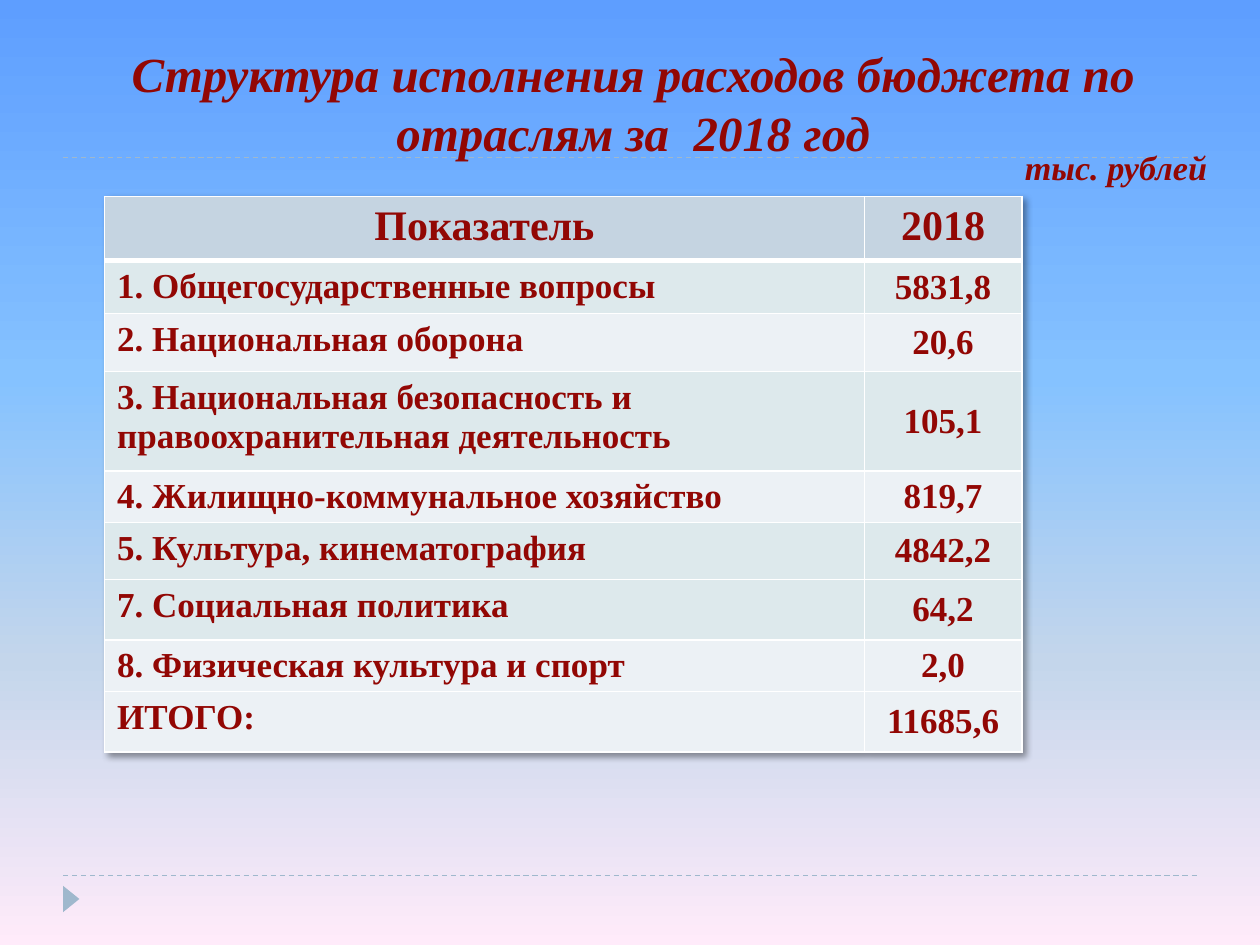
from dataclasses import dataclass
from lxml import etree
from pptx import Presentation
from pptx.dml.color import RGBColor
from pptx.enum.dml import MSO_LINE
from pptx.enum.shapes import MSO_CONNECTOR, MSO_SHAPE
from pptx.enum.text import MSO_ANCHOR, PP_ALIGN
from pptx.oxml.ns import qn
from pptx.util import Inches, Pt

LEFT, MID, RIGHT = PP_ALIGN.LEFT, PP_ALIGN.CENTER, PP_ALIGN.RIGHT
TOP, HALF, BASE = MSO_ANCHOR.TOP, MSO_ANCHOR.MIDDLE, MSO_ANCHOR.BOTTOM
DASH = MSO_LINE.DASH
STRAIGHT = MSO_CONNECTOR.STRAIGHT
WEDGE = MSO_SHAPE.ISOSCELES_TRIANGLE

WIDE, HIGH = Inches(10), Inches(7.5)
COLS, ROWS = 100, 75


@dataclass(frozen=True)
class Theme:
    font: str = "Times New Roman"
    ink: str = "920704"
    rule: str = "9FB8CD"
    edge: str = "FFFFFF"
    head: str = "C5D4E1"
    dark: str = "DDE9EC"
    pale: str = "ECF1F5"
    sky: tuple = ((0, "5E9EFF"), (40, "85C2FF"), (70, "C4D6EB"), (100, "FFEBFA"))
    title: float = 28
    label: float = 24
    body: float = 20
    unit: float = 19.5


@dataclass(frozen=True)
class Box:
    x: float
    y: float
    w: float
    h: float

    def place(self) -> tuple:
        return across(self.x), down(self.y), across(self.w), down(self.h)


@dataclass(frozen=True)
class Note:
    text: str
    box: Box
    size: float
    align: int
    anchor: int


@dataclass(frozen=True)
class Item:
    name: str
    value: str
    tall: float
    fill: str


LOOK = Theme()

NOTES = (
    Note("Структура исполнения расходов бюджета по отраслям за  2018 год",
         Box(5.5, 2.9, 89.5, 10.4), LOOK.title, MID, BASE),
    Note("тыс. рублей", Box(78.9, 10.9, 17.9, 4.7), LOOK.unit, RIGHT, HALF),
)

ITEMS = (
    Item("Показатель", "2018", 5.1, LOOK.head),
    Item("1. Общегосударственные вопросы", "5831,8", 4.2, LOOK.dark),
    Item("2. Национальная оборона", "20,6", 4.6, LOOK.pale),
    Item("3. Национальная безопасность и правоохранительная деятельность",
         "105,1", 7.9, LOOK.dark),
    Item("4. Жилищно-коммунальное хозяйство", "819,7", 4.1, LOOK.pale),
    Item("5. Культура, кинематография", "4842,2", 4.5, LOOK.dark),
    Item("7. Социальная политика", "64,2", 4.8, LOOK.dark),
    Item("8. Физическая культура и спорт", "2,0", 4.1, LOOK.pale),
    Item("ИТОГО:", "11685,6", 4.8, LOOK.pale),
)
SPANS = (60.3, 12.5)


def across(n: float) -> int:
    return round(WIDE * n / COLS)


def down(n: float) -> int:
    return round(HIGH * n / ROWS)


def tint(code: str) -> RGBColor:
    return RGBColor.from_string(code)


def child(node, tag: str, **attrs):
    return etree.SubElement(node, qn(tag), attrs)


def paint_sky(slide) -> None:
    fill = slide.background.fill
    fill.gradient()
    fill.gradient_angle = 270
    stops = slide.element.find(".//" + qn("a:gsLst"))
    for old in list(stops):
        stops.remove(old)
    for pos, code in LOOK.sky:
        stop = child(stops, "a:gs", pos=str(pos * 1000))
        child(stop, "a:srgbClr", val=code)


def draw_rule(slide, y: float) -> None:
    line = slide.shapes.add_connector(
        STRAIGHT, across(5), down(y), across(95), down(y))
    line.line.color.rgb = tint(LOOK.rule)
    line.line.width = Pt(0.75)
    line.line.dash_style = DASH
    child(line.element.spPr, "a:effectLst")


def draw_wedge(slide, box: Box) -> None:
    wedge = slide.shapes.add_shape(WEDGE, *box.place())
    wedge.rotation = 90
    wedge.shadow.inherit = False
    wedge.fill.solid()
    wedge.fill.fore_color.rgb = tint(LOOK.rule)
    wedge.line.fill.background()


def write(frame, text: str, size: float, align: int, slant: bool = False) -> None:
    para = frame.paragraphs[0]
    para.alignment = align
    run = para.add_run()
    run.text = text
    font = run.font
    font.name, font.size = LOOK.font, Pt(size)
    font.bold, font.italic = True, slant
    font.color.rgb = tint(LOOK.ink)


def draw_note(slide, note: Note) -> None:
    frame = slide.shapes.add_textbox(*note.box.place()).text_frame
    frame.word_wrap = True
    frame.vertical_anchor = note.anchor
    write(frame, note.text, note.size, note.align, True)


def edge_cell(cell, base: float) -> None:
    props = cell._tc.get_or_add_tcPr()
    sides = (("L", 1), ("R", 1), ("T", 1), ("B", base))
    for spot, (side, width) in enumerate(sides):
        line = etree.Element(qn("a:ln" + side), w=str(Pt(width)))
        child(child(line, "a:solidFill"), "a:srgbClr", val=LOOK.edge)
        props.insert(spot, line)


def cast_shade(table) -> None:
    props = table._tbl.tblPr
    shade = etree.Element(qn("a:effectLst"))
    outer = child(shade, "a:outerShdw", blurRad=str(Pt(4)), dist=str(Pt(3)),
                  dir="2700000", algn="tl", rotWithShape="0")
    child(child(outer, "a:srgbClr", val="000000"), "a:alpha", val="40000")
    props.insert(0, shade)


def draw_table(slide, x: float, y: float) -> None:
    box = Box(x, y, sum(SPANS), sum(item.tall for item in ITEMS))
    table = slide.shapes.add_table(len(ITEMS), len(SPANS), *box.place()).table
    cast_shade(table)
    for col, span in zip(table.columns, SPANS):
        col.width = across(span)
    for r, item in enumerate(ITEMS):
        table.rows[r].height = down(item.tall)
        top = r == 0
        for c, text in enumerate((item.name, item.value)):
            cell = table.cell(r, c)
            cell.fill.solid()
            cell.fill.fore_color.rgb = tint(item.fill)
            cell.vertical_anchor = HALF if c and not top else TOP
            edge_cell(cell, 3 if top else 1)
            write(cell.text_frame, text, LOOK.label if top else LOOK.body,
                  MID if c or top else LEFT)


def main() -> None:
    deck = Presentation()
    deck.slide_width, deck.slide_height = WIDE, HIGH
    slide = deck.slides.add_slide(deck.slide_layouts[6])
    paint_sky(slide)
    for y in (69.5, 12.5):
        draw_rule(slide, y)
    draw_wedge(slide, Box(4.6, 70.7, 2.1, 1.3))
    draw_table(slide, 8.3, 15.6)
    for note in NOTES:
        draw_note(slide, note)
    deck.save("out.pptx")


if __name__ == "__main__":
    main()
